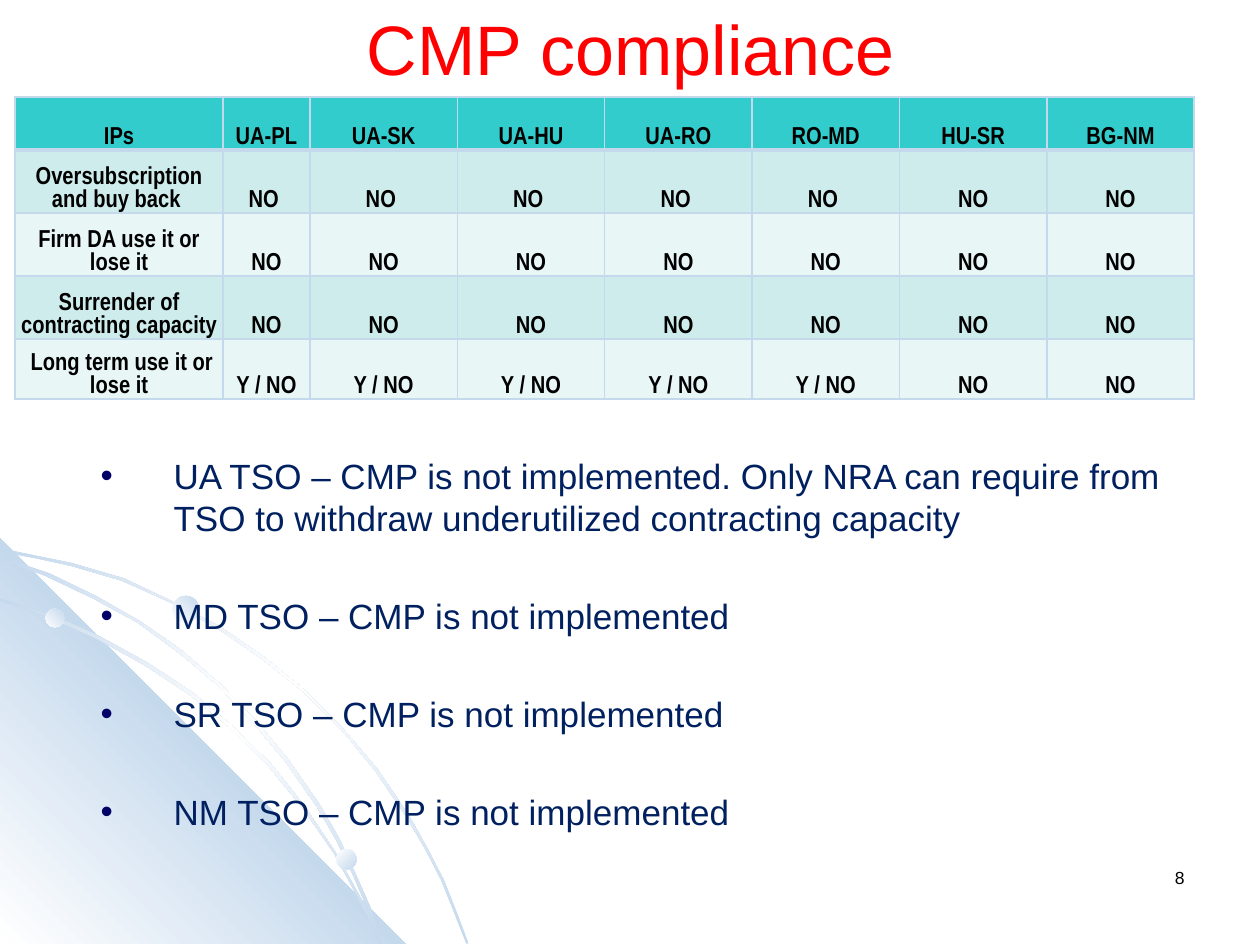
"""Build the CMP compliance slide."""
from dataclasses import dataclass

from lxml import etree
from pptx import Presentation
from pptx import util as u
from pptx.dml.color import RGBColor
from pptx.enum import shapes, text
from pptx.oxml import ns

EMU_PER_PX = 9144


@dataclass(frozen=True)
class Theme:
    """Colours, fonts and type sizes of the slide."""
    red: str = "FF0000"
    navy: str = "002060"
    bullet: str = "000066"
    black: str = "000000"
    white: str = "FFFFFF"
    mist: str = "C5D9ED"
    header: str = "33CCCC"
    bands: tuple = ("CEECEC", "E8F6F6")
    font: str = "Arial"
    narrow: str = "Arial Narrow"
    title_size: int = 40
    body_size: int = 20
    table_size: int = 14
    number_size: int = 10


def px(length):
    """Turn px into EMU."""
    return u.Emu(length * EMU_PER_PX)


def add_xml(parent, tag, **attributes):
    """Append a DrawingML element and return it."""
    return etree.SubElement(parent, ns.qn(f"a:{tag}"), attributes)


class SlideBuilder:
    """Draw styled elements on one slide."""

    def __init__(self, presentation, theme):
        """Start a title-only slide."""
        self.theme = theme
        self.slide = presentation.slides.add_slide(presentation.slide_layouts[5])

    def format(self, paragraph, size, color, align, font=None, bold=False):
        """Style a paragraph and its runs."""
        paragraph.alignment = align
        for run in paragraph.runs:
            run.font.name = font or self.theme.font
            run.font.size = u.Pt(size)
            run.font.bold = bold
            run.font.color.rgb = RGBColor.from_string(color)

    def gradient(self, shape, colors, angle):
        """Fill a shape with evenly spaced colours and no outline."""
        shape.shadow.inherit = False
        shape.line.fill.background()
        shape.fill.gradient()
        shape.fill.gradient_angle = (360 - angle) % 360
        stops = next(shape.element.iter(ns.qn("a:gsLst")))
        stops[:] = []
        for index, color in enumerate(colors):
            stop = add_xml(stops, "gs", pos=str(100000 * index // (len(colors) - 1)))
            add_xml(stop, "srgbClr", val=color)

    def outline(self, points, colors, angle):
        """Add a closed gradient outline."""
        builder = self.slide.shapes.build_freeform(*points[0], scale=EMU_PER_PX)
        builder.add_line_segments(points[1:], close=True)
        self.gradient(builder.convert_to_shape(), colors, angle)

    def dot(self, left, top, size, angle):
        """Add a round gradient dot."""
        shape = self.slide.shapes.add_shape(
            shapes.MSO_SHAPE.OVAL, px(left), px(top), px(size), px(size))
        self.gradient(shape, (self.theme.white, self.theme.mist), angle)

    def title(self, wording, left, top, width, height):
        """Place and format the title."""
        shape = self.slide.shapes.title
        shape.left, shape.top, shape.width, shape.height = map(px, (left, top, width, height))
        frame = shape.text_frame
        frame.text = wording
        frame.auto_size = text.MSO_AUTO_SIZE.NONE
        frame.vertical_anchor = text.MSO_ANCHOR.MIDDLE
        self.format(frame.paragraphs[0], self.theme.title_size, self.theme.red,
                    text.PP_ALIGN.CENTER)

    def text_box(self, wording, left, top, width, height):
        """Add a wrapping text box and return its frame."""
        frame = self.slide.shapes.add_textbox(*map(px, (left, top, width, height))).text_frame
        frame.word_wrap = True
        frame.text = wording
        return frame

    def page_number(self, wording, *box):
        """Add the right-aligned page number."""
        frame = self.text_box(wording, *box)
        self.format(frame.paragraphs[0], self.theme.number_size, self.theme.black,
                    text.PP_ALIGN.RIGHT)

    def bullets(self, items, margin_top, *box):
        """Add a bulleted list below a top margin."""
        frame = self.text_box("\n".join(items), *box)
        frame.margin_top = px(margin_top)
        for index, paragraph in enumerate(frame.paragraphs):
            self.format(paragraph, self.theme.body_size, self.theme.navy, text.PP_ALIGN.LEFT)
            paragraph.line_spacing = u.Pt(24)
            paragraph.space_before = u.Pt(32 if index else 0)
            properties = paragraph._p.get_or_add_pPr()
            properties.set("marL", str(px(108)))
            properties.set("indent", str(px(-58)))
            add_xml(add_xml(properties, "buClr"), "srgbClr", val=self.theme.bullet)
            add_xml(properties, "buFont", typeface=self.theme.font)
            add_xml(properties, "buChar", char="•")

    def cell(self, cell, wording, fill, top_line, bottom_line):
        """Write, fill and border one table cell."""
        cell.text = wording
        cell.vertical_anchor = text.MSO_ANCHOR.BOTTOM
        cell.margin_left = cell.margin_right = cell.margin_top = px(1)
        cell.margin_bottom = 0
        self.format(cell.text_frame.paragraphs[0], self.theme.table_size, self.theme.black,
                    text.PP_ALIGN.CENTER, self.theme.narrow, True)
        properties = cell._tc.get_or_add_tcPr()
        for side, points in zip("LRTB", (1, 1, top_line, bottom_line)):
            line = add_xml(properties, f"ln{side}", w=str(u.Pt(points)))
            add_xml(add_xml(line, "solidFill"), "srgbClr", val=self.theme.mist)
        cell.fill.solid()
        cell.fill.fore_color.rgb = RGBColor.from_string(fill)

    def table(self, rows, left, top, widths, heights):
        """Add a banded table with a heavy line under its header."""
        table = self.slide.shapes.add_table(
            len(rows), len(widths), px(left), px(top), px(sum(widths)), px(sum(heights))).table
        table.horz_banding = False
        for column, width in zip(table.columns, widths):
            column.width = px(width)
        for index, (row, height, wordings) in enumerate(zip(table.rows, heights, rows)):
            row.height = px(height)
            fill = self.theme.bands[(index - 1) % 2] if index else self.theme.header
            for cell, wording in zip(row.cells, wordings):
                self.cell(cell, wording, fill, 3 if index == 1 else 1, 1 if index else 3)


ARCS = (
    ((57, 447), (28, 441), (0, 435), (0, 438), (28, 443), (56, 449), (97, 461), (135, 478),
     (173, 499), (208, 523), (241, 549), (271, 579), (298, 612), (323, 649), (337, 673),
     (350, 698), (360, 723), (370, 749), (372, 749), (362, 723), (352, 698), (339, 673),
     (325, 648), (300, 611), (272, 578), (242, 548), (209, 521), (174, 497), (136, 477),
     (98, 459)),
    ((285, 714), (294, 732), (301, 749), (303, 749), (296, 730), (286, 712), (266, 676),
     (242, 640), (215, 606), (184, 576), (152, 549), (117, 526), (79, 505), (41, 488),
     (0, 475), (0, 477), (39, 490), (77, 507), (115, 528), (150, 551), (183, 578),
     (213, 608), (240, 641), (265, 677)),
    ((0, 442), (0, 444), (36, 457), (74, 475), (109, 494), (142, 518), (173, 544), (202, 575),
     (227, 605), (252, 641), (267, 667), (280, 694), (292, 722), (301, 749), (303, 749),
     (294, 720), (282, 693), (269, 665), (254, 639), (229, 603), (204, 573), (175, 543),
     (144, 516), (111, 493), (76, 473), (39, 455)),
)
CORNER = ((322, 749), (0, 749), (0, 427))
DOTS = ((36, 483, 15, 315), (267, 674, 16, 45), (137, 473, 21, 315))
COMPLIANCE = (
    ("IPs", "UA-PL", "UA-SK", "UA-HU", "UA-RO", "RO-MD", "HU-SR", "BG-NM"),
    ("Oversubscription and buy back ", *["NO "] * 5, "NO", "NO"),
    ("Firm DA use it or lose it", *["NO"] * 7),
    ("Surrender of contracting capacity", *["NO"] * 7),
    (" Long term use it or lose it", *["Y / NO"] * 5, "NO", "NO"),
)
FINDINGS = (
    "UA TSO – CMP is not implemented. Only NRA can require from TSO to withdraw "
    "underutilized contracting capacity",
    *(f"{country} TSO – CMP is not implemented" for country in ("MD", "SR", "NM")),
)


def main():
    """Build and save the presentation."""
    presentation = Presentation()
    presentation.slide_width, presentation.slide_height = px(1000), px(750)
    theme = Theme()
    builder = SlideBuilder(presentation, theme)
    arc_colors = (theme.mist, theme.white, theme.mist)
    builder.outline(ARCS[0], arc_colors, 45)
    builder.outline(CORNER, (theme.white, theme.mist, theme.white), 315)
    for arc in ARCS[1:]:
        builder.outline(arc, arc_colors, 45)
    for dot in DOTS:
        builder.dot(*dot)
    builder.page_number("8", 717, 683, 233, 50)
    builder.title("CMP compliance", 28, 0, 945, 76)
    builder.bullets(FINDINGS, 285, 20, 76, 953, 654)
    builder.table(COMPLIANCE, 12, 77, (165, 69, *[117] * 6), (42, 50, 50, 50, 41))
    presentation.save("out.pptx")


if __name__ == "__main__":
    main()
